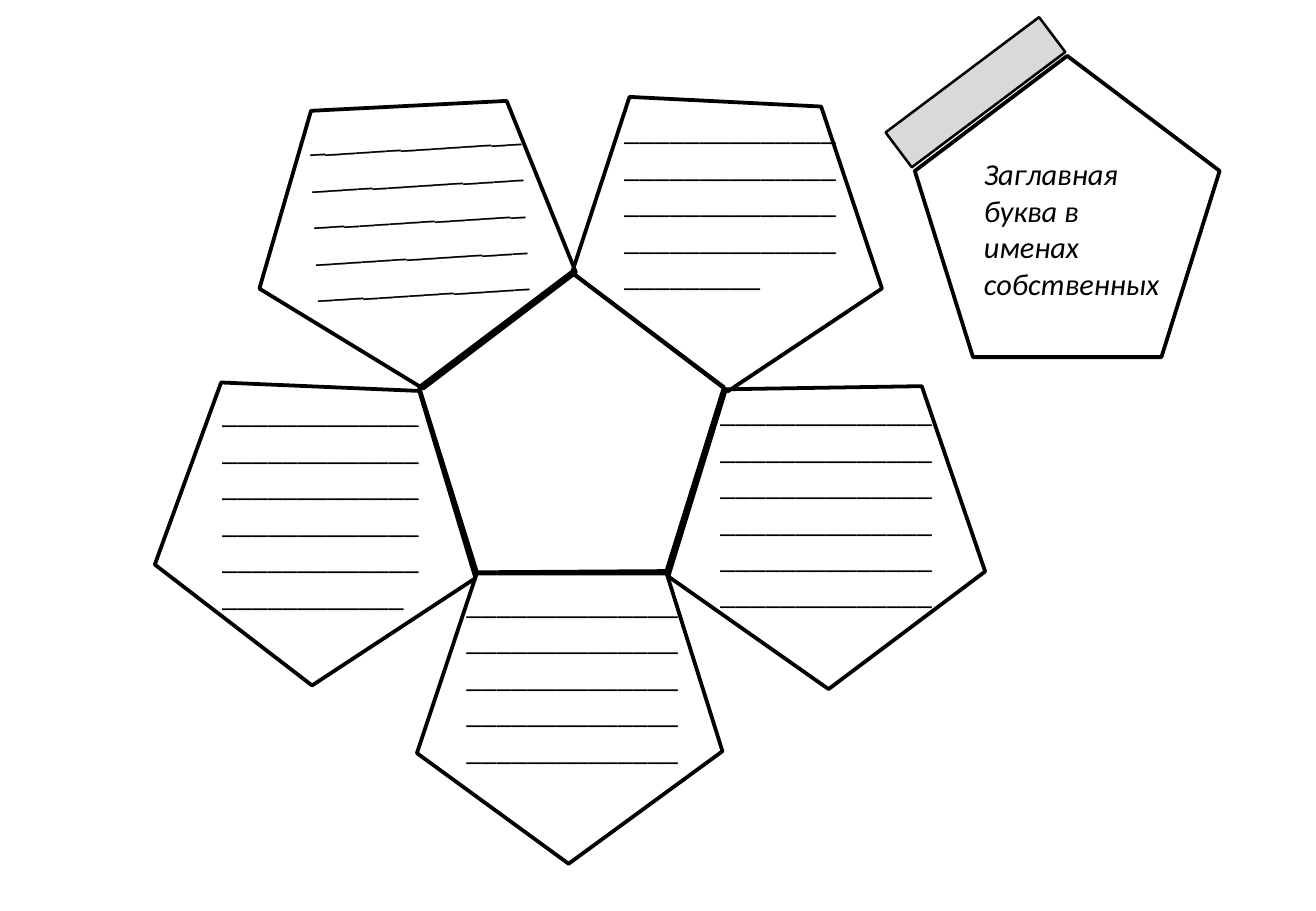
from pptx import Presentation
from pptx.dml.color import RGBColor
from pptx.enum.shapes import MSO_SHAPE
from pptx.enum.text import MSO_AUTO_SIZE
from pptx.util import Pt

BLACK = RGBColor(0x00, 0x00, 0x00)
TAB_GREY = RGBColor(0xD9, 0xD9, 0xD9)

# left, top, width, height, rotation
PENTAGONS = [
    (253.4, 321.8, 180, 174.2, 36.1),
    (342, 46.1, 187.9, 167.8, 37.2),
    (248.4, 161.3, 180.7, 178.6, 0),
    (404.6, 223.2, 187.9, 178.6, 107.1),
    (103.7, 221, 185.8, 181.4, 110),
    (152.6, 62.6, 187.9, 167.8, 177.1),
    (542.2, 33.1, 180.7, 178.6, 0),
]

# left, top, width, height, rotation, number of underscores
WRITING_AREAS = [
    (178.6, 65.5, 146.2, 116.6, 356.9, 70),
    (362.9, 61.9, 140.6, 116.6, 0, 65),
    (124.6, 229.7, 137.5, 138.2, 0, 77),
    (419.8, 229, 144, 138.2, 0, 84),
    (269.3, 342.7, 143.3, 116.6, 0, 70),
]


def add_outlined(shapes, kind, left, top, width, height, rotation, weight, fill=None):
    outlined = shapes.add_shape(kind, Pt(left), Pt(top), Pt(width), Pt(height))
    outlined.rotation = rotation
    outlined.shadow.inherit = False
    outlined.line.color.rgb = BLACK
    outlined.line.width = Pt(weight)
    if fill is None:
        outlined.fill.background()
    else:
        outlined.fill.solid()
        outlined.fill.fore_color.rgb = fill


def add_text(shapes, text, left, top, width, height, rotation=0, italic=None):
    box = shapes.add_textbox(Pt(left), Pt(top), Pt(width), Pt(height))
    box.rotation = rotation
    frame = box.text_frame
    frame.word_wrap = True
    frame.auto_size = MSO_AUTO_SIZE.SHAPE_TO_FIT_TEXT
    paragraph = frame.paragraphs[0]
    paragraph.text = text
    paragraph.font.name = "Calibri"
    paragraph.font.size = Pt(18)
    paragraph.font.italic = italic
    paragraph.font.color.rgb = BLACK


def main():
    presentation = Presentation()
    presentation.slide_width = Pt(780)
    presentation.slide_height = Pt(540)
    slide = presentation.slides.add_slide(presentation.slide_layouts[6])

    flower = slide.shapes.add_group_shape()
    for pentagon in PENTAGONS:
        add_outlined(flower.shapes, MSO_SHAPE.REGULAR_PENTAGON, *pentagon, weight=2.25)
    for *placement, count in WRITING_AREAS:
        add_text(flower.shapes, "_" * count, *placement)

    add_text(slide.shapes, "Заглавная буква в именах собственных",
             576, 88.6, 118.8, 94.3, italic=True)
    add_outlined(slide.shapes, MSO_SHAPE.RECTANGLE, 565.2, -2.2, 25.9, 113.8, 53.1,
                 weight=1.5, fill=TAB_GREY)

    presentation.save("out.pptx")


if __name__ == "__main__":
    main()
